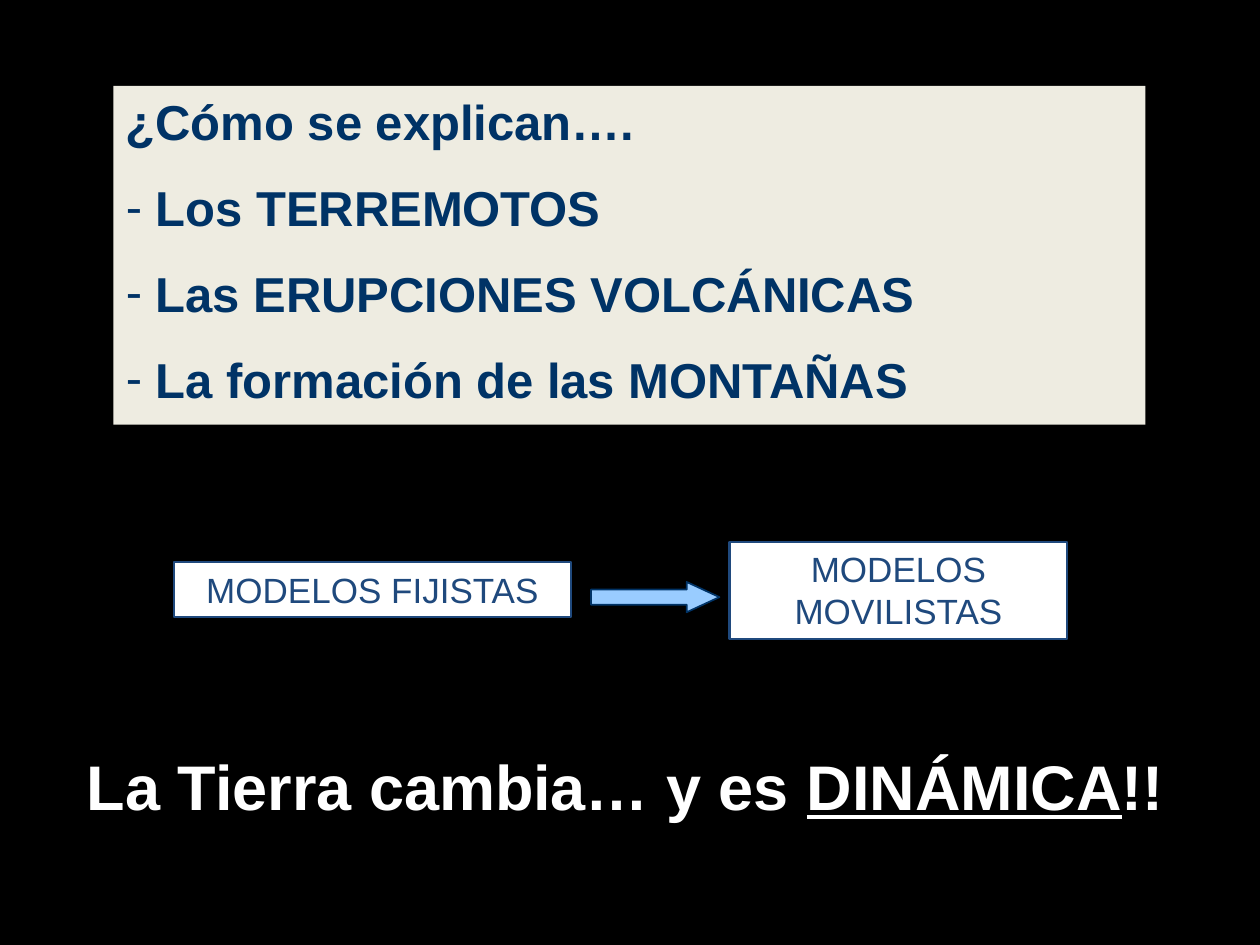
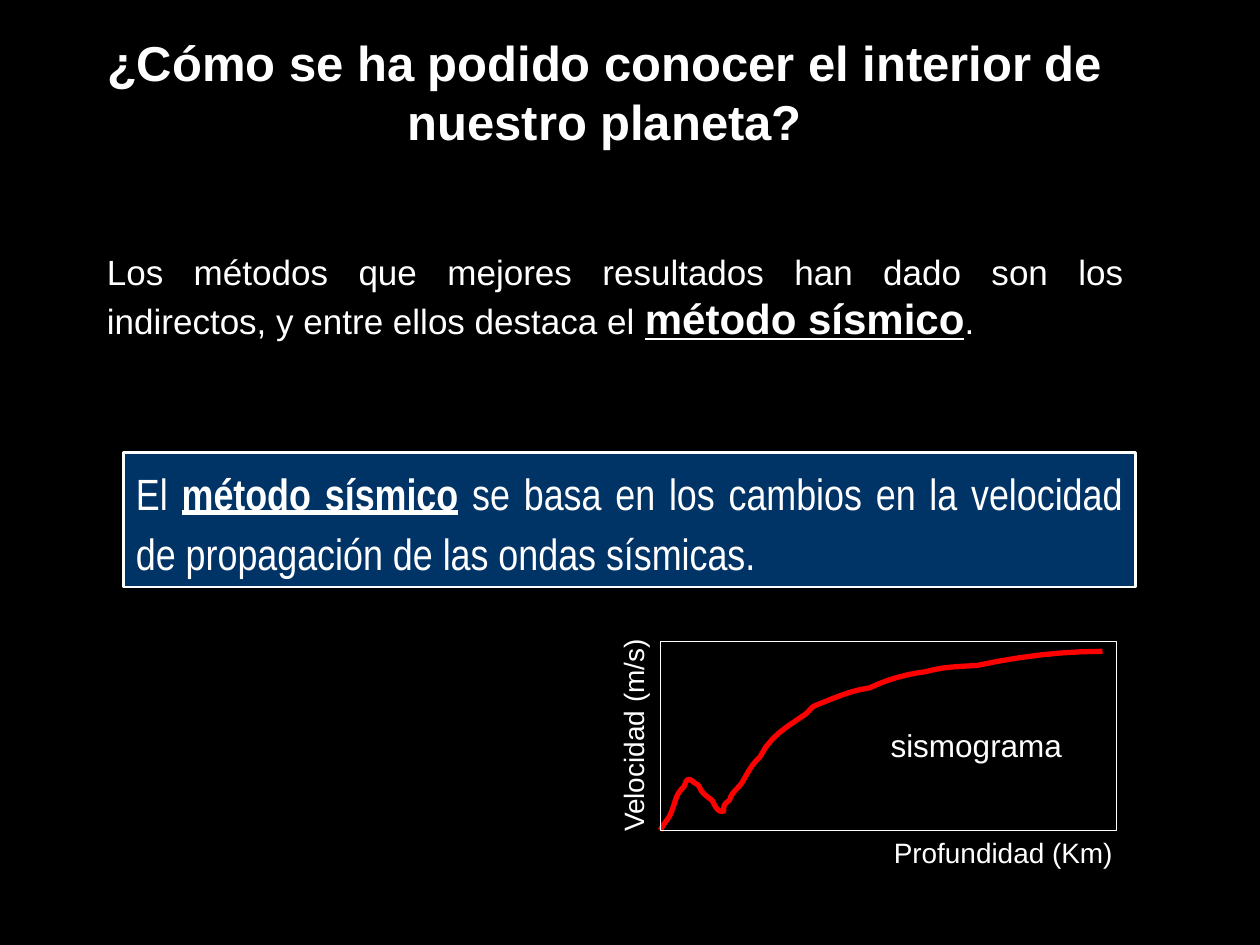
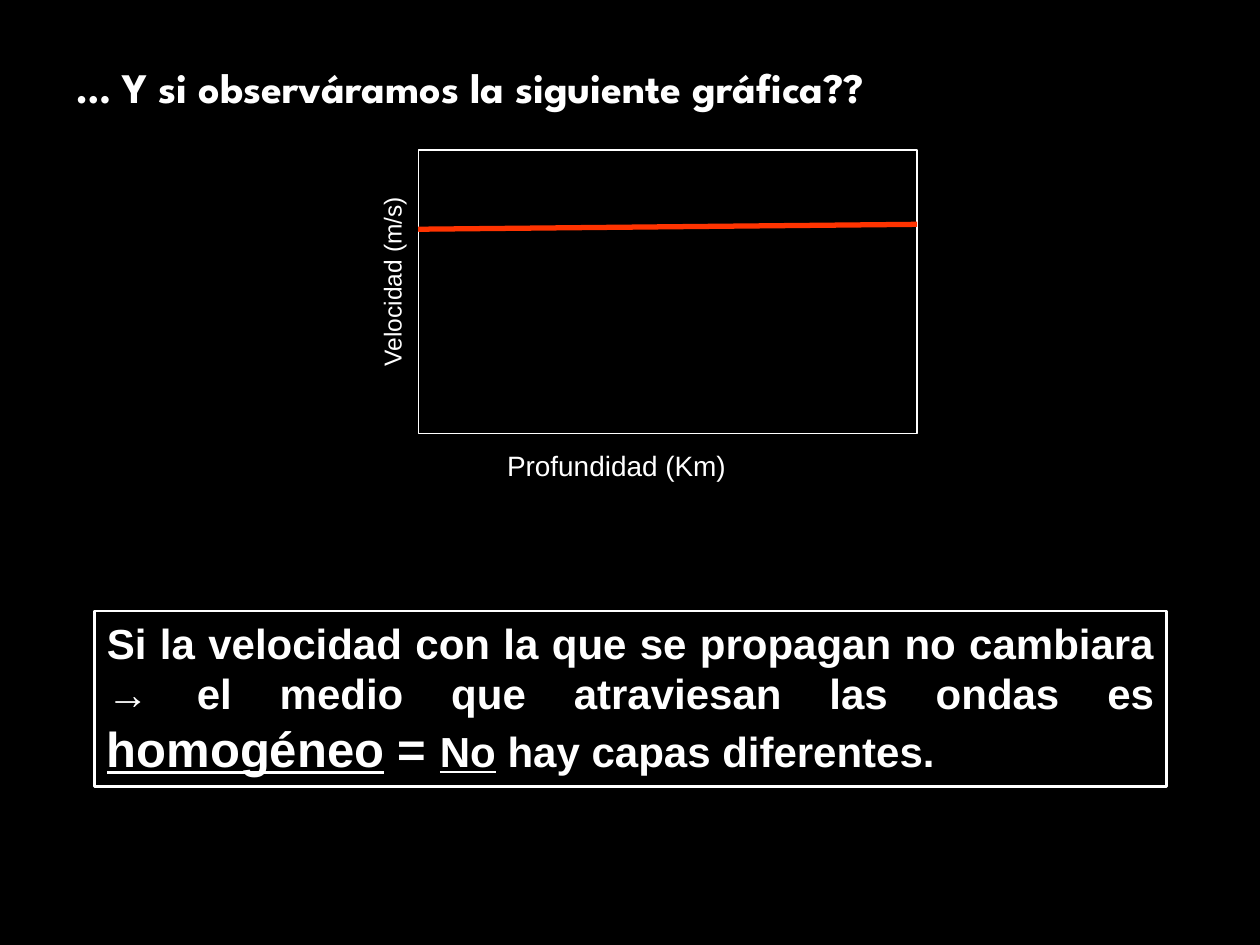
from lxml.etree import SubElement
from pptx import Presentation
from pptx.dml.color import RGBColor as RGB
from pptx.enum.shapes import MSO_CONNECTOR as CONN, MSO_SHAPE as SHAPE
from pptx.enum.text import MSO_ANCHOR as ANCHOR, PP_ALIGN as ALIGN
from pptx.oxml.ns import qn
from pptx.util import Pt

COLORS = {
    "black": "000000", "white": "FFFFFF", "cream": "EEECE1", "navy": "003366",
    "blue": "1F497D", "sky": "99CCFF", "red": "FF0000", "orange": "FF3300",
}
BOLD = {"bold": True}
UNDERLINED = {"underline": True}
KEYWORD = BOLD | UNDERLINED

CURVE_START = (377.3, 474.5)
CURVE = [
    [(379.4, 470.2), (382.3, 468), (383.8, 463.7)],
    [(386.6, 456.5), (385.9, 454.3), (391, 449.3)],
    [(393.1, 442.1), (394.6, 446.4), (398.9, 448.6)],
    [(399.6, 449.3), (400.3, 451.4), (401, 452.2)],
    [(402.5, 454.3), (406.8, 457.2), (406.8, 457.2)],
    [(408.2, 459.4), (409.7, 464.4), (413.3, 463.7)],
    [(414, 463.7), (413.3, 460.8), (414, 460.1)],
    [(414.7, 458.6), (416.2, 457.9), (416.9, 457.2)],
    [(418.3, 452.2), (421.2, 451.4), (424.1, 447.1)],
    [(427, 442.1), (429.8, 436.3), (434.2, 432.7)],
    [(440.6, 419.8), (450, 415.4), (460.1, 408.2)],
    [(462.2, 406.8), (463.7, 403.9), (465.8, 403.2)],
    [(476.6, 398.9), (486, 394.6), (496.8, 393.1)],
    [(507.6, 388.1), (517.7, 385.2), (529.2, 383.8)],
    [(538.6, 380.9), (549.4, 380.9), (558.7, 380.2)],
    [(582.5, 375.1), (606.2, 372.2), (630, 372.2)],
]


def rgb(name):
    return RGB.from_string(COLORS[name])


def new_slide(prs):
    slide = prs.slides.add_slide(prs.slide_layouts[6])
    fill = slide.background.fill
    fill.solid()
    fill.fore_color.rgb = rgb("black")
    return slide


def style(s, fill=None, line=None, width=1):
    s.shadow.inherit = False
    if fill:
        s.fill.solid()
        s.fill.fore_color.rgb = rgb(fill)
    else:
        s.fill.background()
    if line:
        s.line.color.rgb = rgb(line)
        s.line.width = Pt(width)
    else:
        s.line.fill.background()


def add_box(slide, box, fill=None, line=None, width=1, kind=SHAPE.RECTANGLE):
    s = slide.shapes.add_shape(kind, *map(Pt, box))
    style(s, fill, line, width)
    return s


def add_bullet(p, char, indent):
    pPr = p._p.get_or_add_pPr()
    pPr.set("marL", str(Pt(indent)))
    pPr.set("indent", str(-Pt(indent)))
    SubElement(pPr, qn("a:buFont"), typeface="Arial")
    SubElement(pPr, qn("a:buChar"), char=char)


def write(p, runs, size, color="white", font="Arial", align=ALIGN.LEFT, **fmt):
    p.alignment = align
    for text, extra in runs:
        r = p.add_run()
        r.text = text
        r.font.color.rgb = rgb(color)
        values = {"name": font, "size": Pt(size)} | fmt | extra
        for key, value in values.items():
            setattr(r.font, key, value)


def fill_text(s, runs, size, **fmt):
    tf = s.text_frame
    tf.word_wrap = True
    tf.vertical_anchor = ANCHOR.TOP
    write(tf.paragraphs[0], runs, size, **fmt)
    return tf


def add_label(slide, box, runs, size, rotation=0, **fmt):
    s = slide.shapes.add_textbox(*map(Pt, box))
    s.rotation = rotation
    fill_text(s, runs, size, **fmt)


def add_axis_labels(slide, y_box, x_box, y_size):
    add_label(slide, y_box, [("Velocidad (m/s)", {})], y_size, rotation=270)
    add_label(slide, x_box, [("Profundidad (Km)", {})], 16, align=ALIGN.RIGHT)


def add_line(slide, start, end, color, width):
    s = slide.shapes.add_connector(CONN.STRAIGHT, *map(Pt, start + end))
    s.line.color.rgb = rgb(color)
    s.line.width = Pt(width)
    SubElement(s._element.spPr, qn("a:effectLst"))


def bezier(points, t):
    weights = ((1 - t) ** 3, 3 * t * (1 - t) ** 2, 3 * t * t * (1 - t), t ** 3)
    return tuple(Pt(sum(w * v for w, v in zip(weights, axis)))
                 for axis in zip(*points))


def add_curve(slide, start, segments, color, width, steps=6):
    points, current = [], start
    for segment in segments:
        points += [bezier([current, *segment], i / steps)
                   for i in range(1, steps + 1)]
        current = segment[-1]
    builder = slide.shapes.build_freeform(*map(Pt, start))
    builder.add_line_segments(points, close=False)
    style(builder.convert_to_shape(), line=color, width=width)


def models_slide(prs):
    slide = new_slide(prs)
    s = add_box(slide, (64.8, 49, 589.7, 193.7), "cream")
    question = {"size": 28, "color": "navy", "bold": True}
    tf = fill_text(s, [("¿Cómo se explican….", {})], **question)
    for text in ("Los TERREMOTOS", "Las ERUPCIONES VOLCÁNICAS",
                 "La formación de las MONTAÑAS"):
        p = tf.add_paragraph()
        p.space_before = Pt(15.4)
        add_bullet(p, "-", 17.1)
        write(p, [(text, {})], **question)

    for text, box in (("MODELOS FIJISTAS", (99.4, 321.1, 226.8, 31.7)),
                      ("MODELOS MOVILISTAS", (416.9, 309.6, 193, 55.4))):
        s = add_box(slide, box, "white", "blue", 1.25)
        fill_text(s, [(text, {})], 20, color="blue", align=ALIGN.CENTER)
    arrow = add_box(slide, (337.7, 332.6, 73.4, 17.3), "sky", "navy",
                    kind=SHAPE.RIGHT_ARROW)
    arrow.adjustments[0] = 0.5
    arrow.adjustments[1] = 1.08

    add_label(slide, (42.5, 423.4, 663.1, 51.1),
              [("La Tierra cambia… y es ", {}), ("DINÁMICA", UNDERLINED),
               ("!!", {})], 36, bold=True)


def method_slide(prs):
    slide = new_slide(prs)
    add_label(slide, (54, 139.7, 595.4, 60.5),
              [("Los métodos que mejores resultados han dado son los "
                "indirectos, y entre ellos destaca el ", {}),
               ("método sísmico", KEYWORD | {"size": Pt(24)}), (".", {})],
              20, align=ALIGN.JUSTIFY)
    add_label(slide, (19.4, 15.1, 652.3, 74.9),
              [("¿Cómo se ha podido conocer el interior de nuestro planeta?",
                {})], 28, align=ALIGN.CENTER, bold=True)

    s = add_box(slide, (70.6, 258.5, 578.2, 77), "navy", "white", 1.5)
    tf = fill_text(s, [("El ", {}), ("método sísmico", KEYWORD),
                       (" se basa en los cambios en la velocidad de "
                        "propagación de las ondas sísmicas.", {})],
                   25, font="Arial Narrow", align=ALIGN.JUSTIFY)
    tf.paragraphs[0].line_spacing = 1.15

    add_curve(slide, CURVE_START, CURVE, "red", 3)
    add_box(slide, (377.3, 366.5, 260.6, 108), line="white", width=0.75)
    add_label(slide, (501.8, 411.1, 130.3, 28.8), [("sismograma", {})], 18)
    add_axis_labels(slide, (295.2, 402.5, 133.2, 26.6),
                    (473, 473.8, 169.9, 26.6), 16)


def homogeneous_slide(prs):
    slide = new_slide(prs)
    large = {"size": Pt(28)}
    s = add_box(slide, (54, 349.2, 612.7, 100.1), line="white", width=1.5)
    fill_text(s, [("Si la velocidad con la que se propagan no cambiara → el "
                   "medio que atraviesan las ondas es ", {}),
                  ("homogéneo", UNDERLINED | large), (" = ", large),
                  ("No", UNDERLINED), (" hay capas diferentes.", {})],
              24, align=ALIGN.JUSTIFY, bold=True)
    add_label(slide, (36.7, 31.7, 617.8, 36),
              [("… Y si observáramos la siguiente gráfica??", {})],
              24, font="League Spartan", bold=True)

    add_box(slide, (239, 85.7, 285.1, 162), line="white", width=0.75)
    add_line(slide, (239, 131), (524.1, 128.2), "orange", 3)
    add_axis_labels(slide, (166.3, 146.2, 115.9, 24.5),
                    (252, 252.7, 169.9, 26.6), 14)


def main():
    prs = Presentation()
    prs.slide_width, prs.slide_height = Pt(720), Pt(540)
    models_slide(prs)
    method_slide(prs)
    homogeneous_slide(prs)
    prs.save("out.pptx")


if __name__ == "__main__":
    main()
